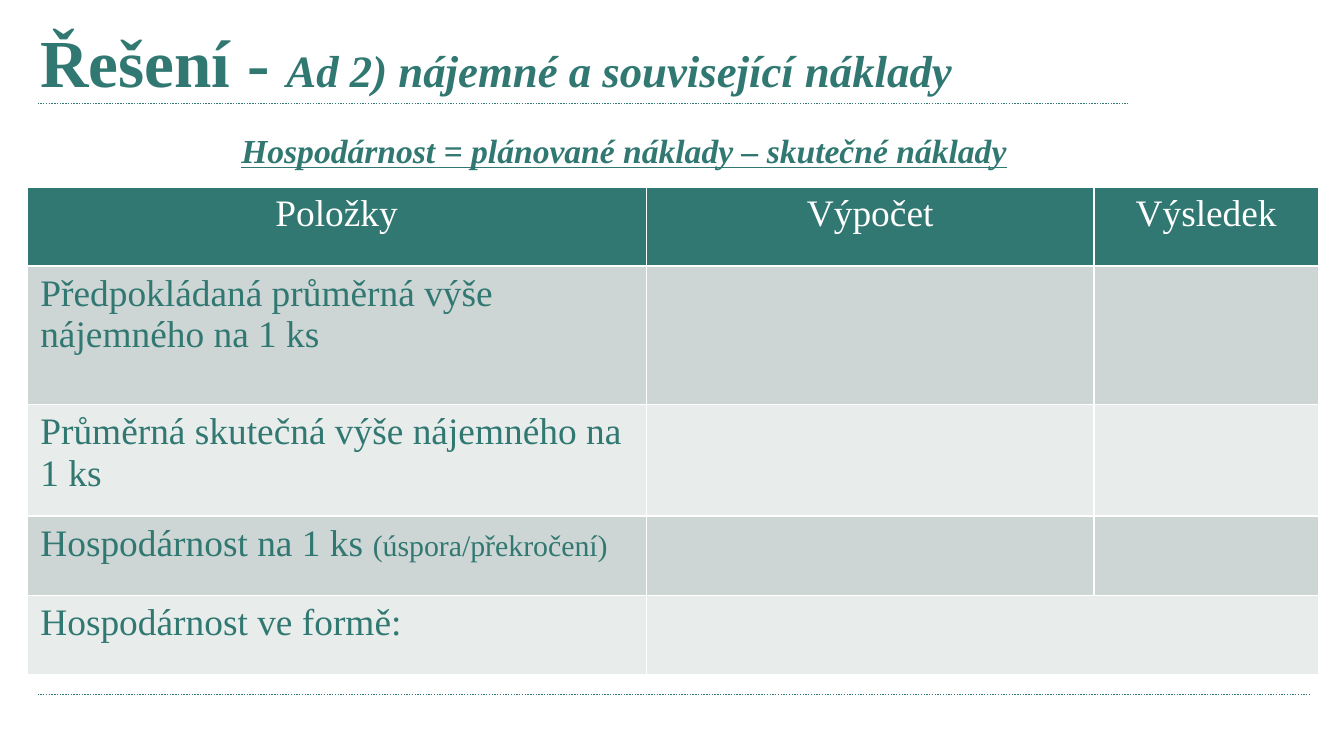
"""Build the slide with the rent cost-efficiency table."""
from lxml import etree
from pptx import Presentation
from pptx.dml.color import RGBColor
from pptx.enum import dml, shapes, text
from pptx.oxml import ns
from pptx.util import Inches, Pt

TEAL = RGBColor(0x30, 0x78, 0x71)
WHITE = RGBColor(0xFF, 0xFF, 0xFF)
BANDS = [RGBColor(0xCD, 0xD6, 0xD5), RGBColor(0xE8, 0xEC, 0xEB)]
FONT = "Times New Roman"

TITLE = [("Řešení - ", 36, False), ("Ad 2) nájemné a související náklady", 24, True)]
FORMULA = "Hospodárnost = plánované náklady – skutečné náklady"
HEADERS = ["Položky", "Výpočet", "Výsledek"]
ITEMS = [
    [("Předpokládaná průměrná výše nájemného na 1 ks", 20)],
    [("Průměrná skutečná výše nájemného na 1 ks", 20)],
    [("Hospodárnost na 1 ks ", 20), ("(úspora/překročení)", 16)],
    [("Hospodárnost ve formě:", 20)],
]
COLUMN_WIDTHS = [4.61, 3.33, 1.67]
ROW_HEIGHTS = [0.59, 1.03, 0.83, 0.59, 0.59]
RULES = [(0.77, 8.39), (5.17, 9.75)]


def add_span(para, words, size, color=TEAL, bold=False, italic=False, underline=False):
    span = para.add_run()
    span.text = words
    font = span.font
    font.name, font.size = FONT, Pt(size)
    font.bold, font.italic, font.underline = bold, italic, underline
    font.color.rgb = color


def add_rule(page, top, right):
    rule = page.shapes.add_connector(
        shapes.MSO_CONNECTOR.STRAIGHT, Inches(0.28), Inches(top), Inches(right), Inches(top))
    rule.line.color.rgb = TEAL
    rule.line.width = Pt(0.75)
    rule.line.dash_style = dml.MSO_LINE.ROUND_DOT
    etree.SubElement(rule._element.spPr, ns.qn("a:effectLst"))


def add_box(page, left, top, width, height):
    box = page.shapes.add_textbox(Inches(left), Inches(top), Inches(width), Inches(height))
    box.text_frame.word_wrap = True
    return box.text_frame


def style_cell(cell, color):
    properties = cell._tc.get_or_add_tcPr()
    for side in "LRTB":
        border = etree.SubElement(properties, ns.qn(f"a:ln{side}"), w=str(Pt(1)))
        fill = etree.SubElement(border, ns.qn("a:solidFill"))
        etree.SubElement(fill, ns.qn("a:srgbClr"), val=str(WHITE))
    cell.fill.solid()
    cell.fill.fore_color.rgb = color


def add_cost_table(page):
    table = page.shapes.add_table(
        len(ROW_HEIGHTS), len(COLUMN_WIDTHS), Inches(0.2), Inches(1.39),
        Inches(sum(COLUMN_WIDTHS)), Inches(sum(ROW_HEIGHTS))).table
    for column, width in zip(table.columns, COLUMN_WIDTHS):
        column.width = Inches(width)
    for row, height in zip(table.rows, ROW_HEIGHTS):
        row.height = Inches(height)
    for cell, header in zip(table.rows[0].cells, HEADERS):
        style_cell(cell, TEAL)
        para = cell.text_frame.paragraphs[0]
        para.alignment = text.PP_ALIGN.CENTER
        add_span(para, header, 20, WHITE)
    for index, item in enumerate(ITEMS):
        for cell in table.rows[index + 1].cells:
            style_cell(cell, BANDS[index % 2])
        for words, size in item:
            add_span(table.cell(index + 1, 0).text_frame.paragraphs[0], words, size)
    last = len(ITEMS)
    table.cell(last, 1).merge(table.cell(last, 2))


def main():
    deck = Presentation()
    deck.slide_width, deck.slide_height = Inches(10), Inches(10 * 9 / 16)
    page = deck.slides.add_slide(deck.slide_layouts[6])
    for top, right in RULES:
        add_rule(page, top, right)

    title = add_box(page, 0.2, 0.1, 8.82, 0.79)
    title.vertical_anchor = text.MSO_ANCHOR.TOP
    for words, size, italic in TITLE:
        add_span(title.paragraphs[0], words, size, bold=True, italic=italic)
    title.paragraphs[0].add_line_break()

    formula = add_box(page, 0.43, 0.92, 8.43, 0.4).paragraphs[0]
    formula.alignment = text.PP_ALIGN.CENTER
    add_span(formula, FORMULA, 18, bold=True, italic=True, underline=True)

    add_cost_table(page)
    deck.save("out.pptx")


if __name__ == "__main__":
    main()
